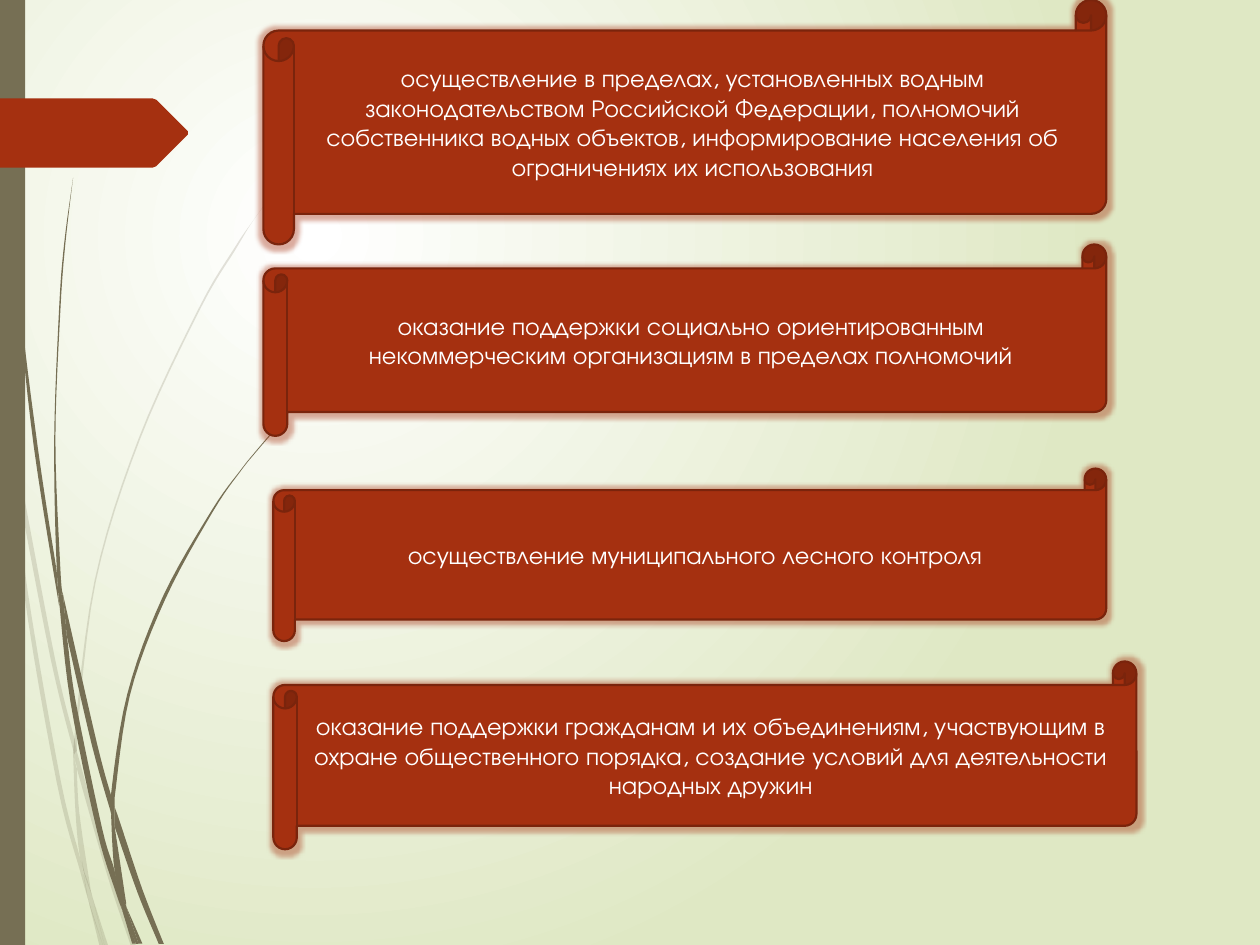
from pptx import Presentation
from pptx.dml.color import RGBColor
from pptx.enum.shapes import MSO_SHAPE
from pptx.enum.text import MSO_ANCHOR, PP_ALIGN
from pptx.oxml.ns import qn
from pptx.util import Pt
from lxml.etree import SubElement

COLORS = {"rust": "A53010", "edge": "7A240C", "olive": "766F54",
          "white": "FFFFFF", "green": "DFE8C4"}
FONT = {"name": "TeX Gyre Adventor", "size": Pt(14)}

SCROLLS = [
    ((150.5, 0, 481.7, 139.7),
     "осуществление в пределах, установленных водным законодательством Российской Федерации, "
     "полномочий собственника водных объектов, информирование населения об ограничениях их использования"),
    ((156.2, 267.8, 475.9, 98.6), "осуществление муниципального лесного контроля"),
    ((156.2, 378, 493.2, 107.3),
     "оказание поддержки гражданам и их объединениям, участвующим в охране общественного порядка, "
     "создание условий для деятельности народных дружин"),
    ((150.5, 139.7, 481.7, 109.4),
     "оказание поддержки социально ориентированным некоммерческим организациям в пределах полномочий"),
]

PALE_STEMS = [
    ([(0, 203), (4.3, 231.8), (5.8, 252)], [(5, 247.7), (0, 215.3)]),
    ([(7.2, 248.4), (31, 374.4), (42.5, 421.9)],
     [(42.5, 431.3), (28.8, 375.8), (8.6, 270.7)]),
    ([(43.9, 429.1), (46.1, 437), (63.4, 498.2), (77.8, 540.7)],
     [(74.9, 540.7), (61.2, 499.7), (43.9, 439.2)]),
    ([(52.6, 511.9), (61.9, 540.7)], [(59.8, 540.7)]),
    ([(5.8, 252), (8.6, 270.7), (15.8, 337.7), (34.6, 445.7), (46.1, 491.8), (50.4, 514.1)],
     [(50.4, 514.1), (46.1, 499), (32.4, 447.1), (13.7, 338.4), (5.8, 252)]),
    ([(41.8, 431.3), (43.2, 465.1), (46.1, 491.8), (52.6, 511.9)],
     [(51.8, 508.3), (45.4, 465.1), (43.9, 439.2)]),
    ([(156.2, 110.2), (144.7, 126), (133.9, 141.8), (113.8, 175.7), (79.2, 250.6),
      (54, 331.9), (42.5, 421.2), (43.9, 429.1)],
     [(43.9, 420.5), (54.7, 332.6), (79.9, 251.3), (114.5, 176.4), (134.6, 142.6),
      (144.7, 126), (156.2, 110.9)]),
    ([(50.4, 514.1), (56.9, 540.7)], [(59, 540.7)]),
    ([(43.9, 437.8), (43.9, 429.1)], [(42.5, 421.9), (41.8, 431.3)]),
    ([(46.8, 491.8), (50.4, 514.1), (59, 540.7)],
     [(59.8, 540.7), (52.6, 511.9), (48.2, 498.2)]),
]

DARK_STEMS = [
    ([(1.4, 0), (2.2, 34.6), (3.6, 79.2), (10.1, 167.8), (19.4, 255.6), (33.8, 346.3)],
     [(32.4, 326.2), (21.6, 255.6), (10.8, 167), (4.3, 78.5), (2.9, 34.6), (2.2, 0)]),
    ([(36, 339.8), (55.4, 424.8), (63.4, 454.3)],
     [(63.4, 464.4), (52.6, 426.2), (38.2, 363.6)]),
    ([(65.5, 461.5), (67.7, 467.3), (81.4, 508.3), (93.6, 539.3)],
     [(90.7, 539.3), (78.5, 509.8), (65.5, 472.3)]),
    ([(33.8, 343.4), (38.2, 363.6), (43.2, 400.3), (58.3, 473), (65.5, 497.5), (69.8, 519.8)],
     [(69.8, 519.8), (66.2, 509.8), (55.4, 474.5), (40.3, 401), (33.8, 343.4)]),
    ([(41.8, 101.5), (36.7, 139), (33.8, 176.4), (31, 251.3), (32.4, 323.3), (35.3, 339.8)],
     [(36, 339.8), (34.6, 326.2), (31.7, 251.3), (34.6, 176.4), (37.4, 139), (41.8, 101.5)]),
    ([(72, 517.7), (79.2, 539.3)], [(81.4, 539.3)]),
    ([(32.4, 323.3), (33.8, 343.4), (38.2, 363.6)], [(36, 339.8), (35.3, 339.8)]),
    ([(154.8, 247.7), (146.2, 257.8), (137.5, 268.6), (121, 291.6), (92.9, 341.3),
      (72.7, 396.7), (63.4, 454.3), (65.5, 461.5)],
     [(65.5, 455.8), (74.2, 397.4), (94.3, 342.7), (121.7, 292.3), (137.5, 269.3),
      (146.2, 258.5), (155.5, 247.7)]),
    ([(69.8, 519.8), (75.6, 539.3)], [(77.8, 539.3)]),
    ([(63.4, 464.4), (65.5, 497.5), (72, 517.7)],
     [(72, 515.5), (65.5, 472.3), (64.8, 468.7)]),
    ([(63.4, 464.4), (65.5, 472.3)], [(65.5, 461.5), (63.4, 454.3)]),
    ([(65.5, 497.5), (69.8, 519.8), (77.8, 539.3)],
     [(79.2, 539.3), (72, 517.7), (69.1, 508.3)]),
]

ARROW = [(0, 56.2), (87.1, 56.2), (89.3, 57), (107.3, 75), (107.3, 77),
         (89.3, 95), (87.1, 95.8), (0, 95.8)]


def rgb(name):
    return RGBColor.from_string(COLORS[name])


def smooth(edge, steps=6):
    ends = [edge[0], *edge, edge[-1]]
    points = [edge[0]]
    for a, b, c, d in zip(ends, ends[1:], ends[2:], ends[3:]):
        for t in (i / steps for i in range(1, steps + 1)):
            points.append(tuple(
                q + t * (r - p) / 2 + t * t * (2 * p - 5 * q + 4 * r - w) / 2
                + t ** 3 * (3 * q - p - 3 * r + w) / 2
                for p, q, r, w in zip(a, b, c, d)))
    return points


def paint(sp, color):
    sp.shadow.inherit = False
    sp.fill.solid()
    sp.fill.fore_color.rgb = rgb(color)
    sp.line.fill.background()


def add_alpha(parent, percent):
    SubElement(parent, qn("a:alpha"), val=str(percent * 1000))


def add_outline(s, points, color):
    start, *rest = [(Pt(x), Pt(y)) for x, y in points]
    builder = s.shapes.build_freeform(*start)
    builder.add_line_segments(rest, close=True)
    sp = builder.convert_to_shape()
    paint(sp, color)
    return sp


def add_scroll(s, box, text):
    sp = s.shapes.add_shape(MSO_SHAPE.HORIZONTAL_SCROLL, *map(Pt, box))
    paint(sp, "rust")
    sp.line.color.rgb = rgb("edge")
    sp.line.width = Pt(1.25)
    effects = sp._element.spPr.find(qn("a:effectLst"))
    glow = SubElement(effects, qn("a:glow"), rad=str(Pt(5)))
    add_alpha(SubElement(glow, qn("a:srgbClr"), val=COLORS["rust"]), 40)
    tf = sp.text_frame
    tf.word_wrap = True
    tf.vertical_anchor = MSO_ANCHOR.MIDDLE
    p = tf.paragraphs[0]
    p.alignment = PP_ALIGN.CENTER
    r = p.add_run()
    r.text = text
    for key, value in FONT.items():
        setattr(r.font, key, value)
    r.font.color.rgb = rgb("white")


def set_background(s):
    fill = s.background.fill
    fill.gradient()
    for stop, color in zip(fill.gradient_stops, ("white", "green")):
        stop.color.rgb = rgb(color)
    grad = s._element.find(".//" + qn("a:gradFill"))
    grad.remove(grad.find(qn("a:lin")))
    circle = SubElement(grad, qn("a:path"), {"path": "circle"})
    SubElement(circle, qn("a:fillToRect"), l="50000", t="50000", r="100000", b="100000")


def main():
    prs = Presentation()
    prs.slide_width, prs.slide_height = Pt(720), Pt(540)
    s = prs.slides.add_slide(prs.slide_layouts[6])
    set_background(s)
    for stems, opacity in ((PALE_STEMS, 20), (DARK_STEMS, 100)):
        for out, back in stems:
            sp = add_outline(s, smooth(out) + smooth(back), "olive")
            if opacity < 100:
                add_alpha(sp._element.spPr.find(qn("a:solidFill"))[0], opacity)
    bar = s.shapes.add_shape(MSO_SHAPE.RECTANGLE, 0, 0, Pt(14.4), Pt(540))
    paint(bar, "olive")
    add_outline(s, ARROW, "rust")
    for box, text in SCROLLS:
        add_scroll(s, box, text)
    prs.save("out.pptx")


if __name__ == "__main__":
    main()
